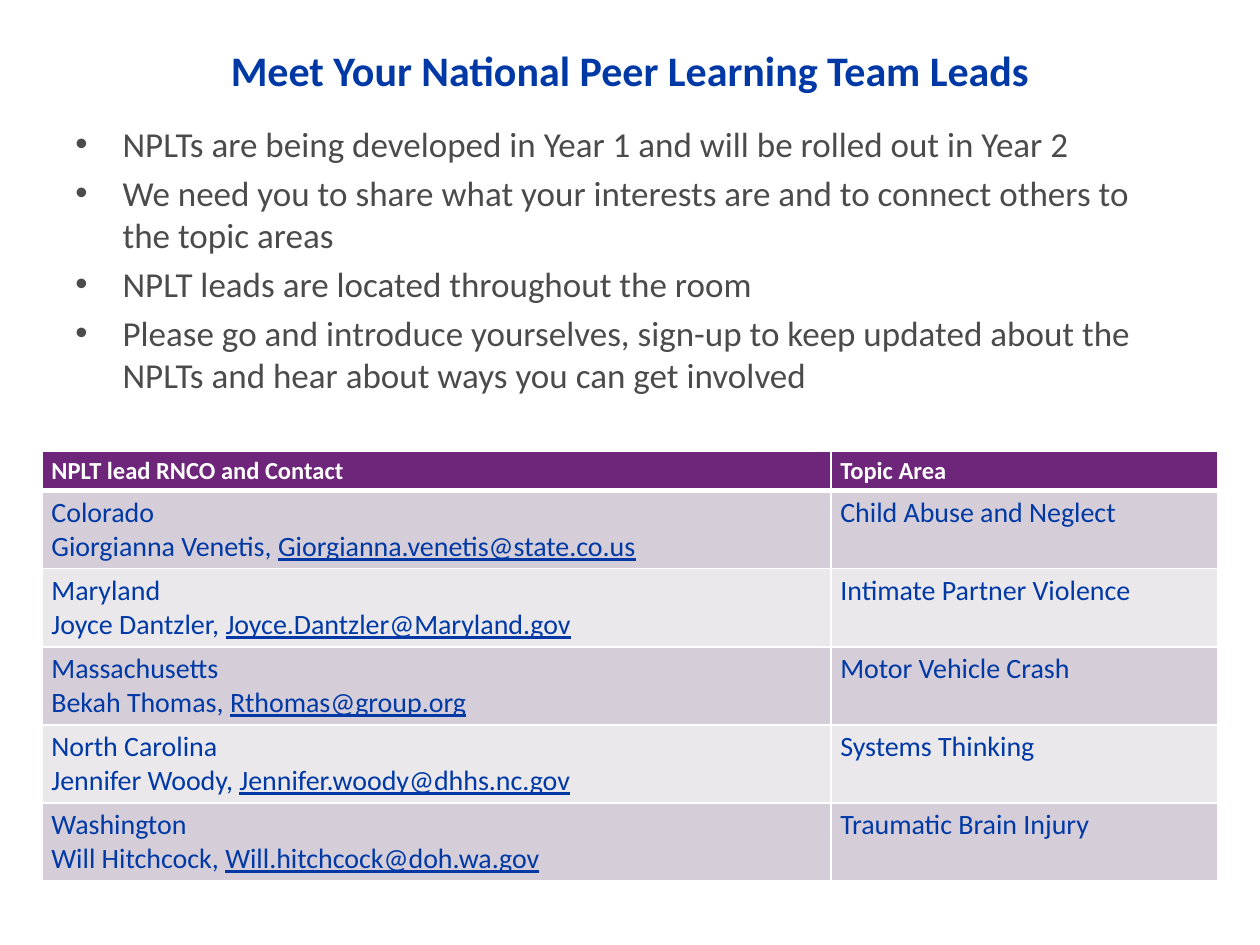
"""Build the National Peer Learning Team leads slide."""
from dataclasses import dataclass

from lxml.etree import SubElement
from pptx import Presentation
from pptx.dml.color import RGBColor
from pptx.enum.text import PP_ALIGN
from pptx.oxml.ns import qn
from pptx.util import Pt

FONT = "Calibri"
COLORS = {
    "blue": "0039A6",
    "gray": "4B4B4B",
    "white": "FFFFFF",
    "purple": "6E267B",
    "dark_band": "D5CDD7",
    "light_band": "EBE8EC",
}


@dataclass(frozen=True)
class TextStyle:
    size: float
    color: str
    bold: bool = False


@dataclass(frozen=True)
class Lead:
    state: str
    name: str
    email: str
    topic: str


TITLE_STYLE = TextStyle(24, "blue", True)
BODY_STYLE = TextStyle(20, "gray")
HEADER_STYLE = TextStyle(14, "white", True)
CELL_STYLE = TextStyle(16, "blue")

TITLE = "Meet Your National Peer Learning Team Leads"
BULLETS = [
    "NPLTs are being developed in Year 1 and will be rolled out in Year 2",
    "We need you to share what your interests are and to connect others to the topic areas",
    "NPLT leads are located throughout the room",
    "Please go and introduce yourselves, sign-up to keep updated about the "
    "NPLTs and hear about ways you can get involved",
]
HEADERS = ["NPLT lead RNCO and Contact", "Topic Area"]
LEADS = [
    Lead("Colorado", "Giorgianna Venetis", "Giorgianna.venetis@state.co.us", "Child Abuse and Neglect"),
    Lead("Maryland", "Joyce Dantzler", "Joyce.Dantzler@Maryland.gov", "Intimate Partner Violence"),
    Lead("Massachusetts", "Bekah Thomas", "Rthomas@group.org", "Motor Vehicle Crash"),
    Lead("North Carolina", "Jennifer Woody", "Jennifer.woody@dhhs.nc.gov", "Systems Thinking"),
    Lead("Washington", "Will Hitchcock", "Will.hitchcock@doh.wa.gov", "Traumatic Brain Injury"),
]
COLUMN_WIDTHS = [450.8, 221]
HEADER_HEIGHT = 22.4
LEAD_HEIGHT = 44.6


def add_run(paragraph, text: str, style: TextStyle, underline: bool = False) -> None:
    """Append one styled run to a paragraph."""
    run = paragraph.add_run()
    run.text = text
    run.font.name = FONT
    run.font.size = Pt(style.size)
    run.font.bold = style.bold
    run.font.underline = underline
    run.font.color.rgb = RGBColor.from_string(COLORS[style.color])


def add_text_frame(slide, top: float, height: float):
    """Add a wrapping text box across the slide and return its text frame."""
    shape = slide.shapes.add_textbox(Pt(36), Pt(top), Pt(648), Pt(height))
    shape.text_frame.word_wrap = True
    return shape.text_frame


def add_title(slide) -> None:
    """Add the centred title."""
    paragraph = add_text_frame(slide, 22, 40).paragraphs[0]
    paragraph.alignment = PP_ALIGN.CENTER
    add_run(paragraph, TITLE, TITLE_STYLE)


def add_bullets(slide) -> None:
    """Add the bulleted list with hanging indents."""
    frame = add_text_frame(slide, 66.5, 257)
    for index, text in enumerate(BULLETS):
        paragraph = frame.add_paragraph() if index else frame.paragraphs[0]
        paragraph.space_before = Pt(4 if index else 0)
        properties = paragraph._p.get_or_add_pPr()
        properties.set("marL", str(Pt(27)))
        properties.set("indent", str(Pt(-27)))
        SubElement(properties, qn("a:buFont"), typeface="Arial")
        SubElement(properties, qn("a:buChar"), char="•")
        add_run(paragraph, text, BODY_STYLE)


def style_cell(cell, fill: str, bottom_width: float = 1, top_width: float = 1) -> None:
    """Set the margins, white borders and fill of a table cell."""
    cell.margin_left = cell.margin_right = Pt(5.4)
    cell.margin_top = cell.margin_bottom = Pt(2.7)
    properties = cell._tc.get_or_add_tcPr()
    widths = {"a:lnL": 1, "a:lnR": 1, "a:lnT": top_width, "a:lnB": bottom_width}
    for tag, width in widths.items():
        line = SubElement(properties, qn(tag), w=str(Pt(width)))
        SubElement(SubElement(line, qn("a:solidFill")), qn("a:srgbClr"), val=COLORS["white"])
    cell.fill.solid()
    cell.fill.fore_color.rgb = RGBColor.from_string(COLORS[fill])


def add_leads_table(slide) -> None:
    """Add the table of team leads and topic areas."""
    height = HEADER_HEIGHT + LEAD_HEIGHT * len(LEADS)
    table = slide.shapes.add_table(
        len(LEADS) + 1, len(HEADERS), Pt(24), Pt(258), Pt(sum(COLUMN_WIDTHS)), Pt(height)
    ).table
    for column, width in zip(table.columns, COLUMN_WIDTHS):
        column.width = Pt(width)
    table.rows[0].height = Pt(HEADER_HEIGHT)
    for column_index, header in enumerate(HEADERS):
        cell = table.cell(0, column_index)
        style_cell(cell, "purple", bottom_width=3)
        add_run(cell.text_frame.paragraphs[0], header, HEADER_STYLE)
    for row_index, lead in enumerate(LEADS, start=1):
        table.rows[row_index].height = Pt(LEAD_HEIGHT)
        contact_cell, topic_cell = table.cell(row_index, 0), table.cell(row_index, 1)
        for cell in (contact_cell, topic_cell):
            style_cell(cell, "dark_band" if row_index % 2 else "light_band",
                       top_width=3 if row_index == 1 else 1)
        add_run(contact_cell.text_frame.paragraphs[0], lead.state, CELL_STYLE)
        contact = contact_cell.text_frame.add_paragraph()
        add_run(contact, f"{lead.name}, ", CELL_STYLE)
        add_run(contact, lead.email, CELL_STYLE, underline=True)
        add_run(topic_cell.text_frame.paragraphs[0], lead.topic, CELL_STYLE)


def main() -> None:
    """Create and save the presentation."""
    presentation = Presentation()
    presentation.slide_width, presentation.slide_height = Pt(720), Pt(540)
    slide = presentation.slides.add_slide(presentation.slide_layouts[6])
    add_title(slide)
    add_bullets(slide)
    add_leads_table(slide)
    presentation.save("out.pptx")


if __name__ == "__main__":
    main()
